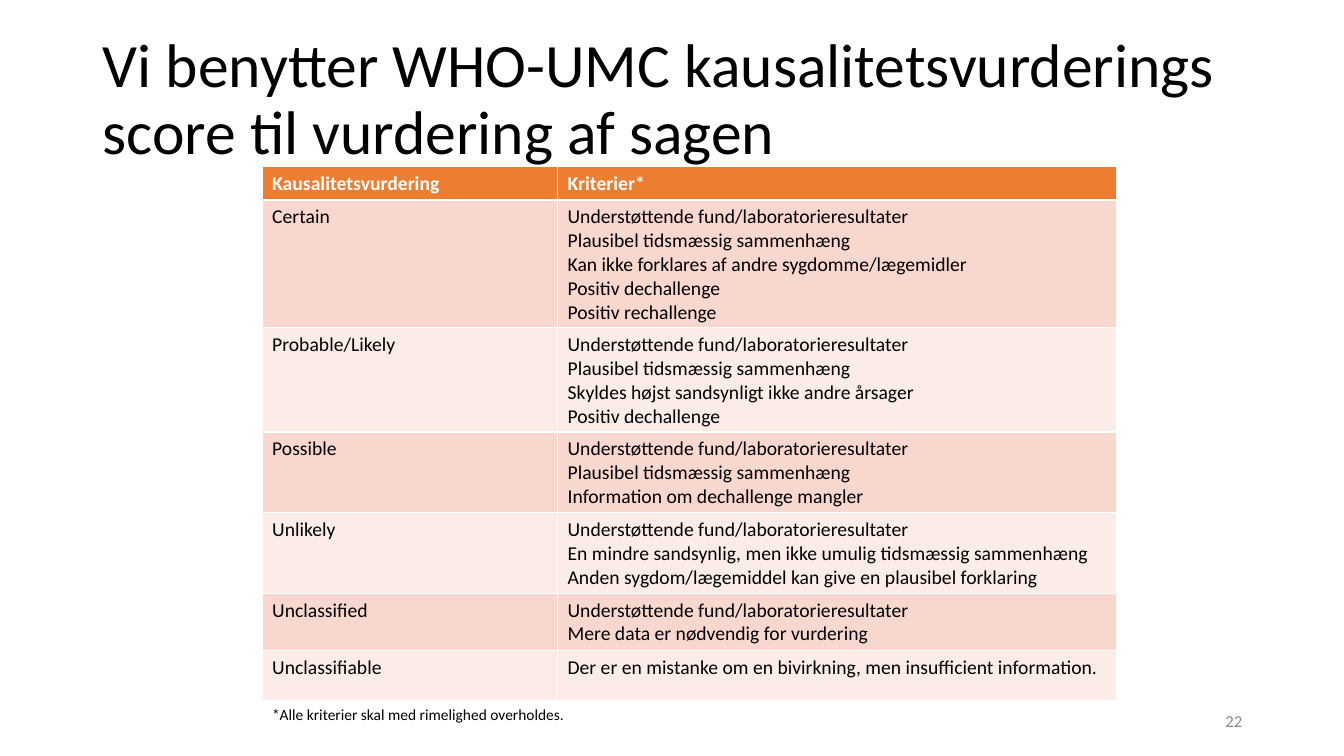
from pptx import Presentation
from pptx.dml.color import RGBColor
from pptx.enum.text import MSO_ANCHOR, MSO_AUTO_SIZE, PP_ALIGN
from pptx.util import Pt

PX = 9144
FONT = "Calibri"
BLACK, WHITE, GREY = "000000", "FFFFFF", "8C8C8C"
ORANGE, BANDS = "ED7D31", ("F8D7CE", "FCECE8")
LEFT, RIGHT = PP_ALIGN.LEFT, PP_ALIGN.RIGHT
TOP, MIDDLE = MSO_ANCHOR.TOP, MSO_ANCHOR.MIDDLE
NO_FIT = MSO_AUTO_SIZE.NONE

TITLE = "Vi benytter WHO-UMC kausalitetsvurderings score til vurdering af sagen"
HEADINGS = ("Kausalitetsvurdering", ["Kriterier*"])
FINDINGS = "Understøttende fund/laboratorieresultater"
TIMING = "Plausibel tidsmæssig sammenhæng"
DECHALLENGE = "Positiv dechallenge"
ASSESSMENTS = [
    ("Certain", [FINDINGS, TIMING, "Kan ikke forklares af andre sygdomme/lægemidler",
                 DECHALLENGE, "Positiv rechallenge"]),
    ("Probable/Likely", [FINDINGS, TIMING,
                         "Skyldes højst sandsynligt ikke andre årsager", DECHALLENGE]),
    ("Possible", [FINDINGS, TIMING, "Information om dechallenge mangler"]),
    ("Unlikely", [FINDINGS,
                  "En mindre sandsynlig, men ikke umulig tidsmæssig sammenhæng",
                  "Anden sygdom/lægemiddel kan give en plausibel forklaring"]),
    ("Unclassified", [FINDINGS, "Mere data er nødvendig for vurdering"]),
    ("Unclassifiable",
     ["Der er en mistanke om en bivirkning, men insufficient information."]),
]
COLUMN_WIDTHS = (293, 554)
ROW_HEIGHTS = (30, 110, 90, 70, 70, 50, 50)


def emu(*lengths):
    """Turn px lengths into EMU."""
    return [length * PX for length in lengths]


def color(value):
    """Turn a hex string into a colour."""
    return RGBColor.from_string(value)


def write(frame, lines, size, ink, bold=False, align=LEFT):
    """Write one formatted paragraph per line."""
    frame.text = "\n".join(lines)
    for paragraph in frame.paragraphs:
        paragraph.alignment = align
        paragraph.font.name = FONT
        paragraph.font.size = Pt(size)
        paragraph.font.bold = bold
        paragraph.font.color.rgb = color(ink)


def add_title(slide):
    """Place and format the slide title."""
    title = slide.shapes.title
    title.left, title.top, title.width, title.height = emu(92, 28, 1150, 145)
    frame = title.text_frame
    write(frame, [TITLE], 44, BLACK)
    frame.auto_size = NO_FIT
    frame.vertical_anchor = MIDDLE
    frame.paragraphs[0].line_spacing = 0.9


def add_label(slide, box, text, size, ink, align=LEFT, anchor=TOP, wrap=True):
    """Add a single-line text box."""
    frame = slide.shapes.add_textbox(*emu(*box)).text_frame
    frame.word_wrap = wrap
    frame.vertical_anchor = anchor
    write(frame, [text], size, ink, align=align)


def add_criteria_table(slide):
    """Add the table of assessments and their criteria."""
    rows = [HEADINGS] + ASSESSMENTS
    box = emu(260, 165, sum(COLUMN_WIDTHS), sum(ROW_HEIGHTS))
    table = slide.shapes.add_table(len(rows), len(COLUMN_WIDTHS), *box).table
    for column, width in zip(table.columns, emu(*COLUMN_WIDTHS)):
        column.width = width
    for row, height in zip(table.rows, emu(*ROW_HEIGHTS)):
        row.height = height
    for index, (assessment, criteria) in enumerate(rows):
        heading = index == 0
        fill = ORANGE if heading else BANDS[(index - 1) % 2]
        for cell, lines in zip(table.rows[index].cells, ([assessment], criteria)):
            cell.fill.solid()
            cell.fill.fore_color.rgb = color(fill)
            write(cell.text_frame, lines, 14, WHITE if heading else BLACK, heading)


def main():
    """Build and save the slide."""
    deck = Presentation()
    deck.slide_width, deck.slide_height = emu(1333, 750)
    slide = deck.slides.add_slide(deck.slide_layouts[5])
    add_title(slide)
    add_label(slide, (942, 695, 300, 40), "22", 12, GREY, RIGHT, MIDDLE)
    add_criteria_table(slide)
    add_label(slide, (260, 695, 316, 29),
              "*Alle kriterier skal med rimelighed overholdes.", 11, BLACK, wrap=False)
    deck.save("out.pptx")


if __name__ == "__main__":
    main()
